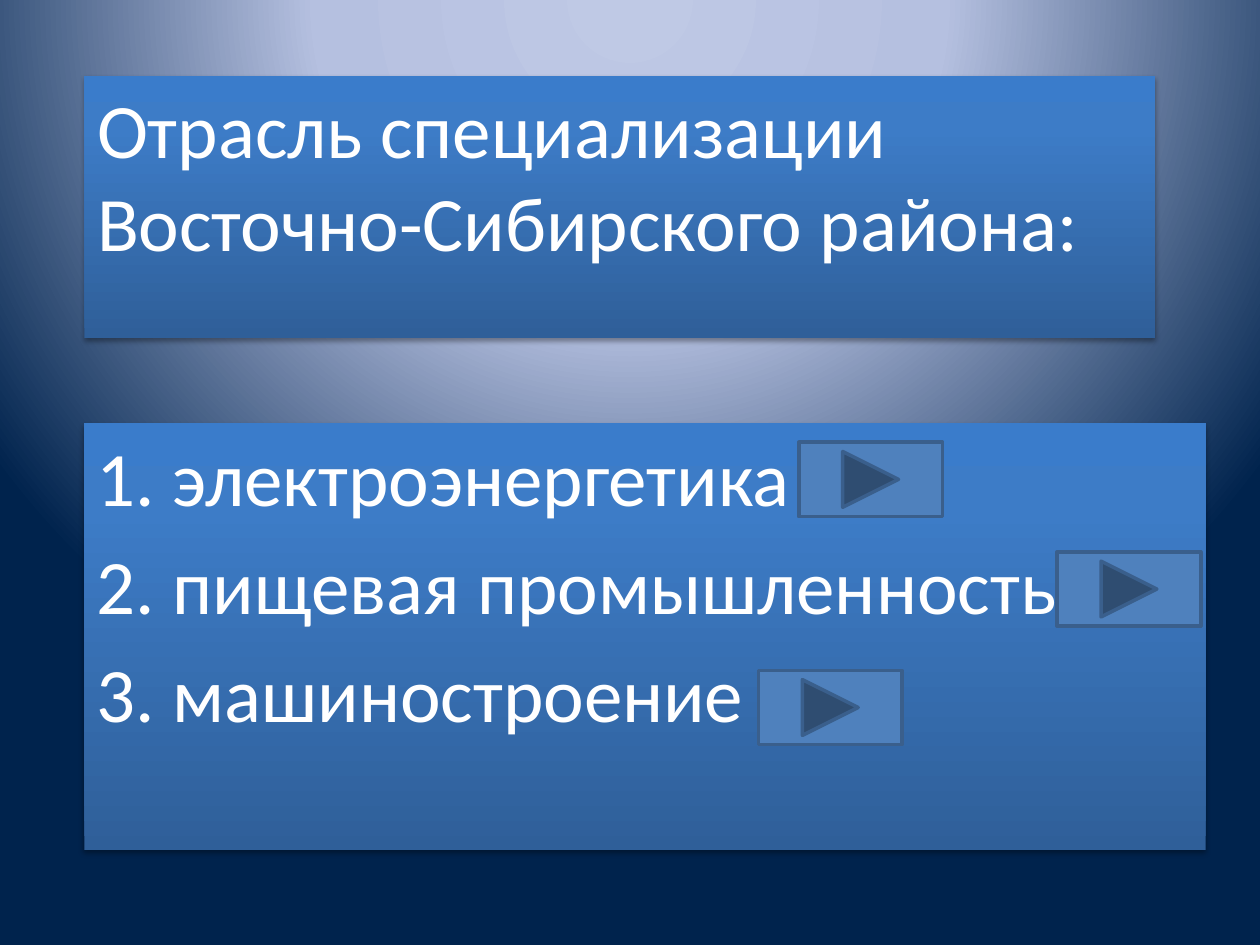
"""Build the slide on the specialised industries of the East Siberian region."""
from lxml import etree
from pptx import Presentation
from pptx.dml.color import RGBColor
from pptx.enum.shapes import MSO_SHAPE
from pptx.enum.text import MSO_ANCHOR, MSO_AUTO_SIZE, PP_ALIGN
from pptx.oxml.ns import qn
from pptx.util import Inches, Pt

RECT = MSO_SHAPE.RECTANGLE
NEXT_BUTTON = MSO_SHAPE.ACTION_BUTTON_FORWARD_OR_NEXT
TOP, LEFT, NO_FIT = MSO_ANCHOR.TOP, PP_ALIGN.LEFT, MSO_AUTO_SIZE.NONE

WHITE = RGBColor(0xFF, 0xFF, 0xFF)
BLACK = RGBColor(0, 0, 0)
BUTTON_FILL = RGBColor(0x4F, 0x81, 0xBD)
BUTTON_LINE = RGBColor(0x3A, 0x5F, 0x8C)
BACKGROUND_STOPS = [(0, RGBColor(0xBF, 0xC9, 0xE5)),
                    (40, RGBColor(0xB5, 0xC0, 0xE0)),
                    (100, RGBColor(0x00, 0x23, 0x4D))]
PANEL_STOPS = [(0, RGBColor(0x2F, 0x5F, 0x99)),
               (80, RGBColor(0x3D, 0x7C, 0xC7)),
               (100, RGBColor(0x3A, 0x7C, 0xCB))]

TITLE = "Отрасль специализации Восточно-Сибирского района:"
INDUSTRIES = ["1. электроэнергетика", "2. пищевая промышленность", "3. машиностроение"]
TITLE_BOX = (0.67, 0.6, 8.5, 2.08)
LIST_BOX = (0.67, 3.36, 8.9, 3.39)
BUTTON_SPOTS = [(6.02, 5.32), (6.34, 3.51), (8.39, 4.38)]
BUTTON_SIZE = (1.14, 0.59)
FONT, TEXT_SIZE, SPACE_BEFORE = "Calibri", 44, 8.8


def add(parent, tag, **attrs):
    return etree.SubElement(parent, qn(tag), {k: str(v) for k, v in attrs.items()})


def set_gradient(fill, element, stops):
    fill.solid()
    solid = element.find(".//" + qn("a:solidFill"))
    grad = etree.Element(qn("a:gradFill"), rotWithShape="1")
    gs_list = add(grad, "a:gsLst")
    for position, color in stops:
        gs = add(gs_list, "a:gs", pos=position * 1000)
        add(gs, "a:srgbClr", val=color)
    solid.getparent().replace(solid, grad)
    return grad


def format_panel(sp, box, lines, space_before):
    sp.left, sp.top, sp.width, sp.height = map(Inches, box)
    grad = set_gradient(sp.fill, sp.element.spPr, PANEL_STOPS)
    add(grad, "a:lin", ang=270 * 60000, scaled=0)
    sp.line.fill.background()
    sp.shadow.inherit = False
    effects = sp.element.spPr.find(qn("a:effectLst"))
    shadow = add(effects, "a:outerShdw", blurRad=Pt(3.1), dist=Pt(1.8),
                 dir=90 * 60000, rotWithShape=0)
    add(add(shadow, "a:srgbClr", val=BLACK), "a:alpha", val=35000)

    tf = sp.text_frame
    tf.word_wrap, tf.auto_size, tf.vertical_anchor = True, NO_FIT, TOP
    for i, line in enumerate(lines):
        p = tf.add_paragraph() if i else tf.paragraphs[0]
        p.alignment, p.space_before = LEFT, Pt(space_before)
        r = p.add_run()
        r.text = line
        r.font.name, r.font.size = FONT, Pt(TEXT_SIZE)
        r.font.color.rgb = WHITE


def add_button(s, spot):
    sp = s.shapes.add_shape(NEXT_BUTTON, *map(Inches, spot + BUTTON_SIZE))
    sp.fill.solid()
    sp.fill.fore_color.rgb = BUTTON_FILL
    sp.line.color.rgb = BUTTON_LINE
    sp.line.width = Pt(2)
    sp.shadow.inherit = False


def main():
    prs = Presentation()
    prs.slide_width, prs.slide_height = Inches(10), Inches(7.5)
    s = prs.slides.add_slide(prs.slide_layouts[5])

    grad = set_gradient(s.background.fill, s.element, BACKGROUND_STOPS)
    circle = add(grad, "a:path", path="circle")
    add(circle, "a:fillToRect", l=50000, t=-80000, r=50000, b=180000)

    format_panel(s.shapes.title, TITLE_BOX, [TITLE], 0)
    industries = s.shapes.add_shape(RECT, *map(Inches, LIST_BOX))
    format_panel(industries, LIST_BOX, INDUSTRIES, SPACE_BEFORE)
    for spot in BUTTON_SPOTS:
        add_button(s, spot)
    prs.save("out.pptx")


if __name__ == "__main__":
    main()
